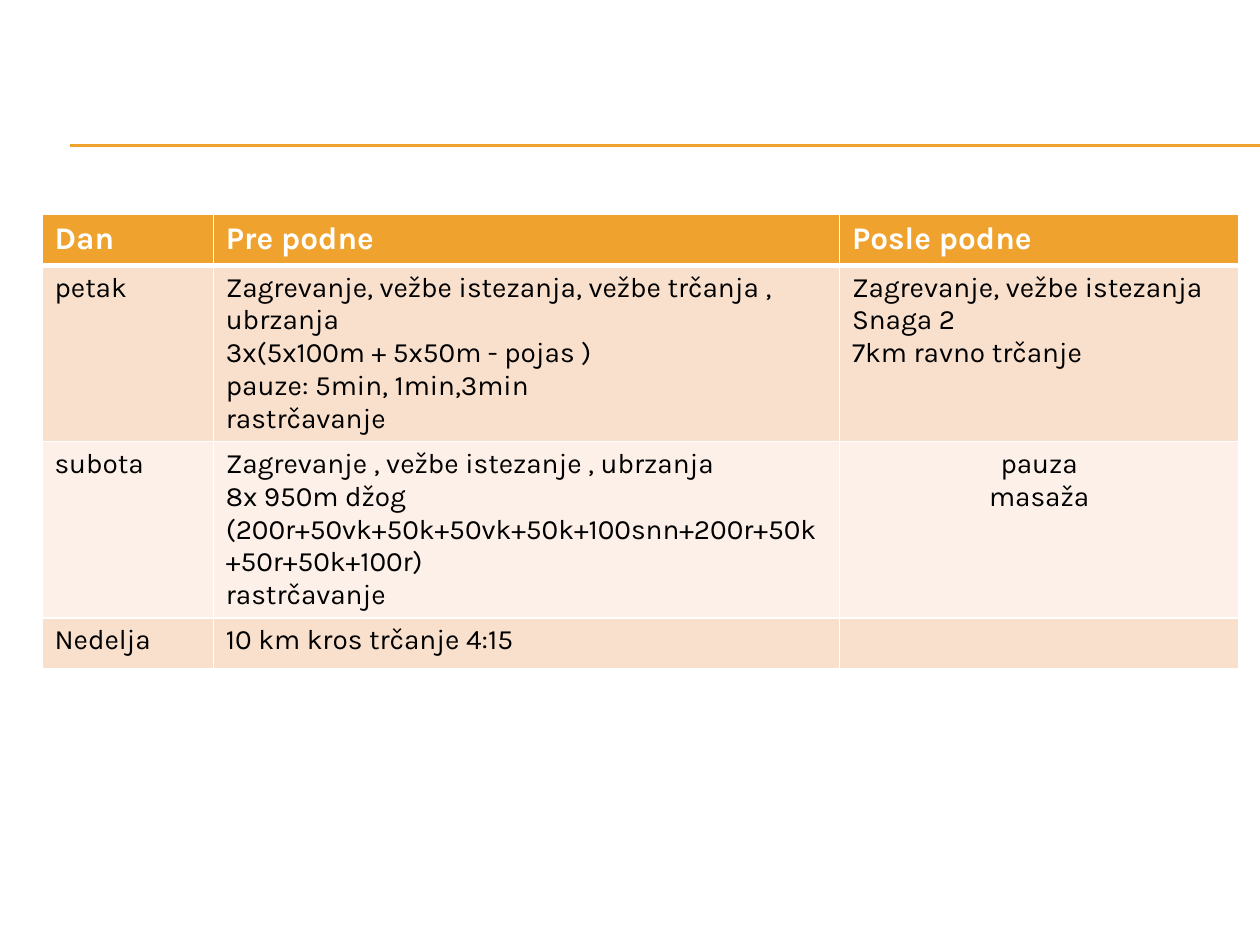
from dataclasses import dataclass

from lxml import etree
from pptx import Presentation
from pptx.dml.color import RGBColor
from pptx.enum import shapes, text
from pptx.oxml import ns
from pptx.util import Pt

COLORS = {
    "accent": "F0A22E",
    "band_dark": "F9E0CD",
    "band_light": "FCF0E8",
    "white": "FFFFFF",
    "black": "000000",
}
FONT = "Karla"
COLUMN_WIDTHS = (97.9, 357.8, 228.3)


@dataclass
class PlanRow:
    cells: tuple[str, str, str]
    height: float
    fill: str = "band_dark"
    color: str = "black"
    size: float = 16
    bold: bool = False
    bottom_border: float = 1
    centered_column: int | None = None


@dataclass
class Rule:
    left: float
    right: float
    top: float


RULES = [Rule(40.3, 720, 82.8), Rule(40.3, 720, 83.5)]
PLAN = [
    PlanRow(("Dan", "Pre podne", "Posle podne"), 29, "accent", "white", 18, True, 3),
    PlanRow(
        (
            "petak",
            "Zagrevanje, vežbe istezanja, vežbe trčanja , ubrzanja\n"
            "3x(5x100m + 5x50m - pojas )\n"
            "pauze: 5min, 1min,3min\n"
            "rastrčavanje",
            "Zagrevanje, vežbe istezanja\nSnaga 2\n7km ravno trčanje",
        ),
        100.5,
    ),
    PlanRow(
        (
            "subota",
            "Zagrevanje , vežbe istezanje , ubrzanja\n"
            "8x 950m džog (200r+50vk+50k+50vk+50k+100snn+200r+50k+50r+50k+100r)\n"
            "rastrčavanje",
            "pauza\nmasaža",
        ),
        100.5,
        "band_light",
        centered_column=2,
    ),
    PlanRow(("Nedelja", "10 km kros trčanje 4:15", ""), 29),
]


def rgb(name: str) -> RGBColor:
    return RGBColor.from_string(COLORS[name])


def draw_rule(page, rule: Rule) -> None:
    line = page.shapes.add_connector(
        shapes.MSO_CONNECTOR.STRAIGHT,
        Pt(rule.left), Pt(rule.top), Pt(rule.right), Pt(rule.top),
    )
    line.line.color.rgb = rgb("accent")
    line.line.width = Pt(0.75)
    etree.SubElement(line._element.spPr, ns.qn("a:effectLst"))


def set_borders(cell, top: float, bottom: float) -> None:
    properties = cell._tc.get_or_add_tcPr()
    widths = {"lnL": 1, "lnR": 1, "lnT": top, "lnB": bottom}
    for position, (side, width) in enumerate(widths.items()):
        border = etree.Element(ns.qn(f"a:{side}"), w=str(Pt(width)))
        fill = etree.SubElement(border, ns.qn("a:solidFill"))
        etree.SubElement(fill, ns.qn("a:srgbClr"), val=COLORS["white"])
        properties.insert(position, border)


def fill_cell(cell, content: str, row: PlanRow, centered: bool, top: float) -> None:
    cell.fill.solid()
    cell.fill.fore_color.rgb = rgb(row.fill)
    set_borders(cell, top, row.bottom_border)
    cell.text_frame.text = content
    for para in cell.text_frame.paragraphs:
        if centered:
            para.alignment = text.PP_ALIGN.CENTER
        for span in para.runs:
            span.font.name = FONT
            span.font.size = Pt(row.size)
            span.font.bold = row.bold
            span.font.color.rgb = rgb(row.color)


def draw_plan(page, rows: list[PlanRow]) -> None:
    frame = page.shapes.add_table(
        len(rows), len(COLUMN_WIDTHS), Pt(24), Pt(122.6),
        Pt(sum(COLUMN_WIDTHS)), Pt(sum(row.height for row in rows)),
    )
    table = frame.table
    for column, width in zip(table.columns, COLUMN_WIDTHS):
        column.width = Pt(width)
    top = 1
    for row_index, row in enumerate(rows):
        table.rows[row_index].height = Pt(row.height)
        for column_index, content in enumerate(row.cells):
            fill_cell(
                table.cell(row_index, column_index), content, row,
                column_index == row.centered_column, top,
            )
        top = row.bottom_border


def main() -> None:
    deck = Presentation()
    deck.slide_width, deck.slide_height = Pt(720), Pt(540)
    page = deck.slides.add_slide(deck.slide_layouts[6])
    for rule in RULES:
        draw_rule(page, rule)
    draw_plan(page, PLAN)
    deck.save("out.pptx")


if __name__ == "__main__":
    main()
